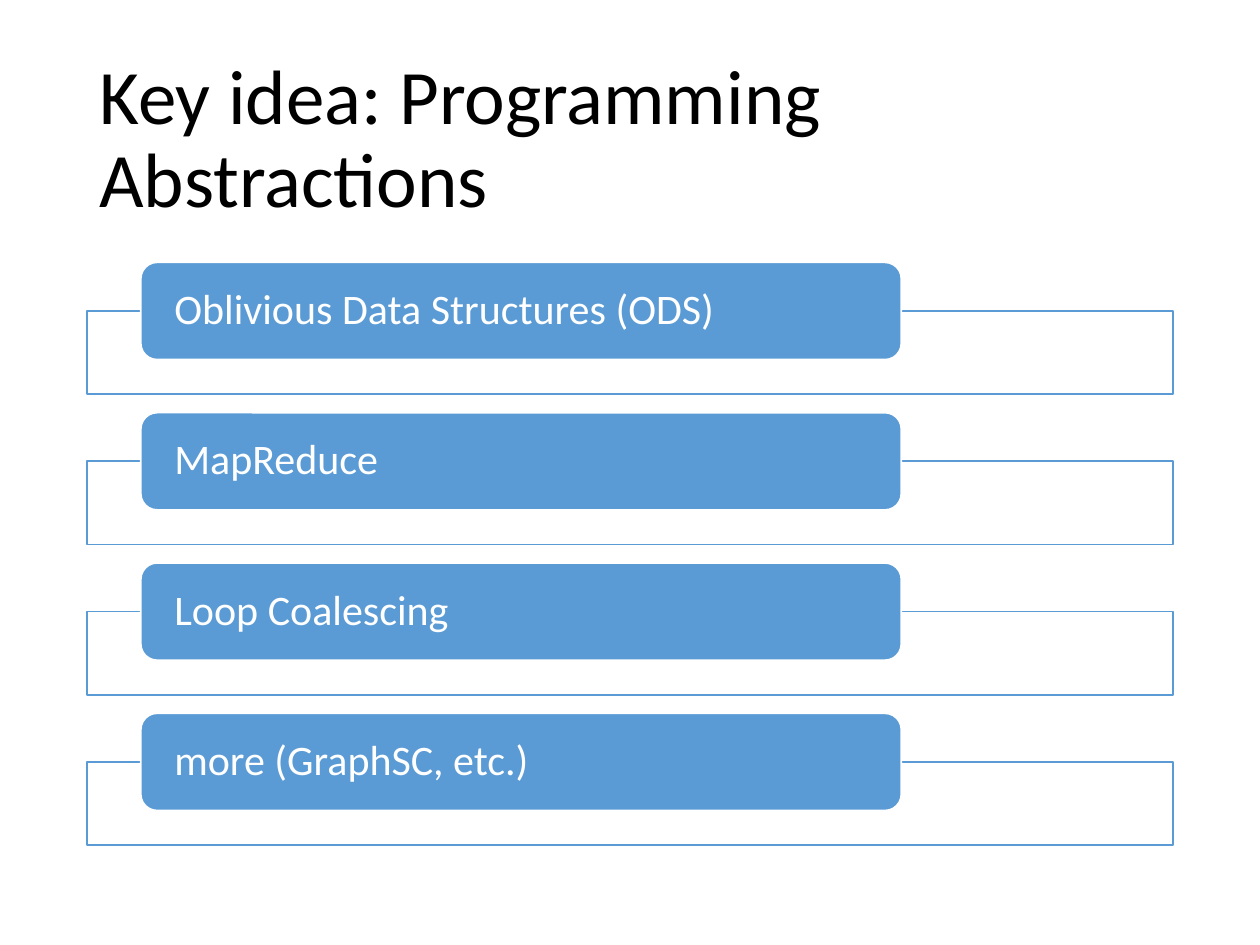
from pptx import Presentation
from pptx.dml.color import RGBColor
from pptx.enum.shapes import MSO_SHAPE as Shape
from pptx.enum.text import MSO_ANCHOR as Anchor, PP_ALIGN as Align
from pptx.oxml.ns import qn
from pptx.util import Cm, Pt
from lxml.etree import SubElement

BLUE = RGBColor(0x5B, 0x9B, 0xD5)
WHITE = RGBColor(0xFF, 0xFF, 0xFF)
BLACK = RGBColor(0, 0, 0)
FONT = "Calibri"
TITLE_ONLY = 5

ABSTRACTIONS = [
    "Oblivious Data Structures (ODS)",
    "MapReduce",
    "Loop Coalescing",
    "more (GraphSC, etc.)",
]


def style_text(paragraph, size, color):
    paragraph.alignment = Align.LEFT
    paragraph.line_spacing = 0.9
    paragraph.font.name = FONT
    paragraph.font.size = Pt(size)
    paragraph.font.color.rgb = color


def add_box(slide, preset, left, top, width, height, fill, line):
    box = slide.shapes.add_shape(preset, left, top, width, height)
    box.shadow.inherit = False
    box.fill.solid()
    box.fill.fore_color.rgb = fill
    box.line.color.rgb = line
    box.line.width = Pt(1)
    return box


def place_title(slide, left, top, width, height):
    title = slide.shapes.title
    title.left, title.top, title.width, title.height = left, top, width, height
    frame = title.text_frame
    frame.text = "Key idea: Programming Abstractions"
    frame.vertical_anchor = Anchor.MIDDLE
    style_text(frame.paragraphs[0], 44, BLACK)


def add_abstraction(slide, name, left, top, width):
    # Outlined panel, slightly see-through
    panel = add_box(slide, Shape.RECTANGLE, left, top + Cm(0.98),
                    width, Cm(1.68), WHITE, BLUE)
    color = panel.fill._xPr.find(qn("a:solidFill"))[0]
    SubElement(color, qn("a:alpha"), val="90000")

    # Label overlapping the panel's top edge
    label = add_box(slide, Shape.ROUNDED_RECTANGLE, left + Cm(1.09), top,
                    width * 0.7, Cm(1.96), BLUE, WHITE)
    frame = label.text_frame
    frame.word_wrap = True
    frame.vertical_anchor = Anchor.MIDDLE
    frame.margin_left = frame.margin_right = Cm(0.58)
    frame.margin_top = frame.margin_bottom = 0
    frame.text = name
    style_text(frame.paragraphs[0], 24, WHITE)


def add_abstraction_list(slide, left, top, width, pitch):
    for row, name in enumerate(ABSTRACTIONS):
        add_abstraction(slide, name, left, top + row * pitch, width)


def main():
    deck = Presentation()
    deck.slide_width, deck.slide_height = Cm(25.4), Cm(19.05)
    slide = deck.slides.add_slide(deck.slide_layouts[TITLE_ONLY])
    left, width = Cm(1.75), Cm(21.9)
    place_title(slide, left, Cm(1.01), width, Cm(3.68))
    add_abstraction_list(slide, left, Cm(5.29), width, pitch=Cm(3.03))
    deck.save("out.pptx")


if __name__ == "__main__":
    main()
